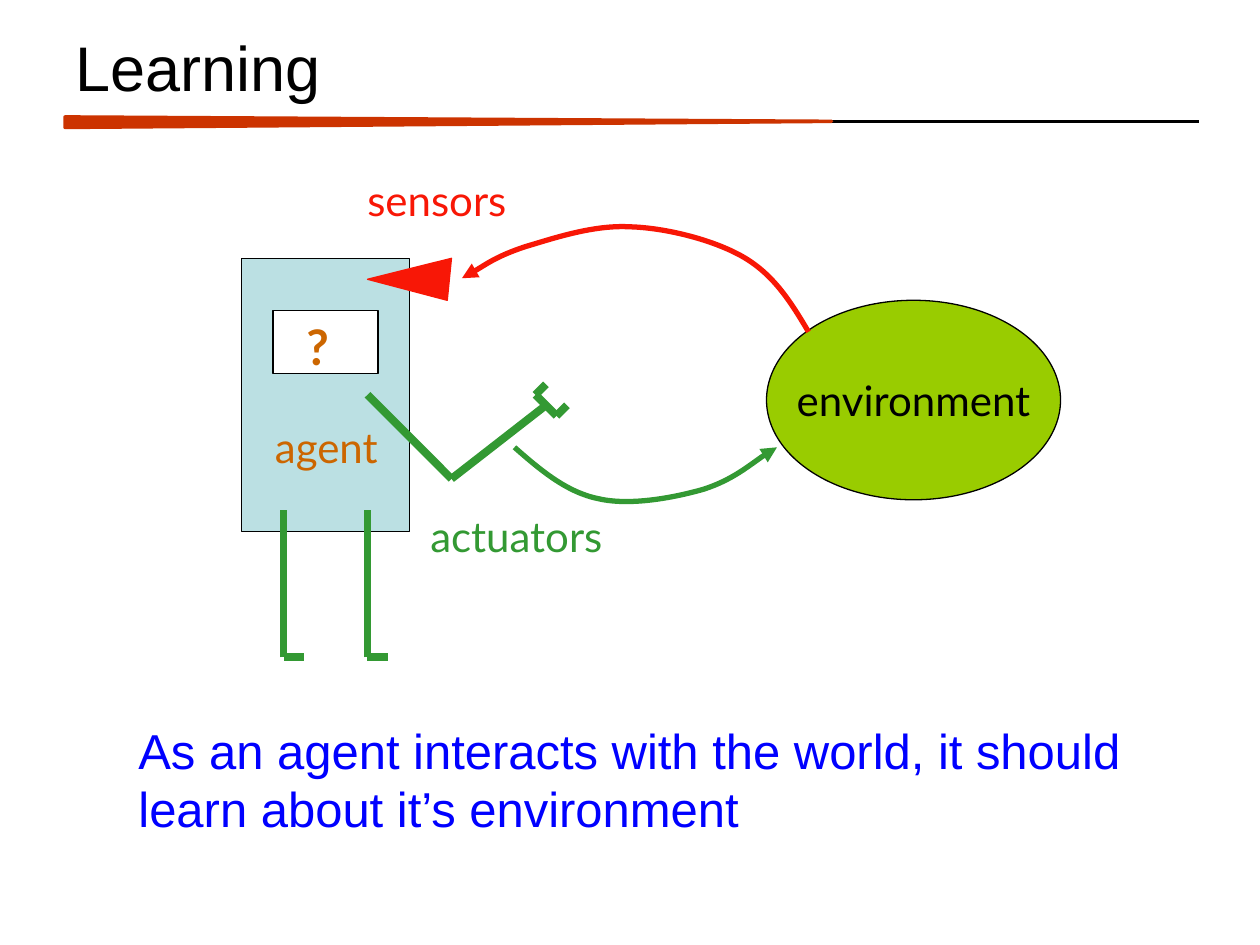
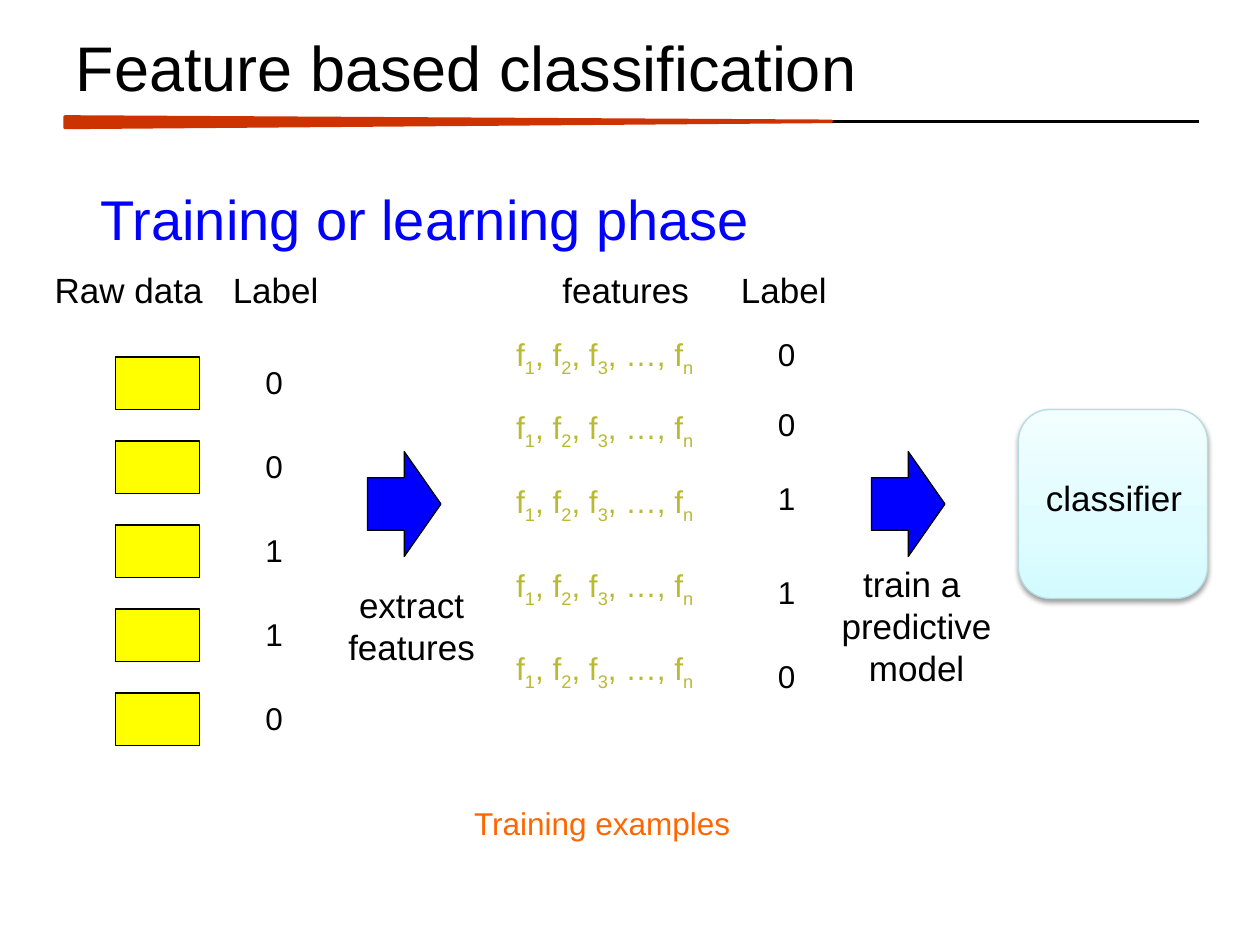
from copy import deepcopy
from dataclasses import dataclass

from lxml.etree import SubElement
from pptx import Presentation
from pptx.dml.color import RGBColor
from pptx.enum.shapes import MSO_CONNECTOR, MSO_SHAPE
from pptx.enum.text import MSO_ANCHOR, PP_ALIGN
from pptx.oxml.ns import qn
from pptx.util import Inches, Pt

GRID = Inches(1 / 12)  # the slide is 120 columns by 90 rows
TEXT_ROWS = 4.8


@dataclass(frozen=True)
class Theme:
    black: str = "000000"
    white: str = "FFFFFF"
    rust: str = "CC3300"
    blue: str = "0000FF"
    lime: str = "99CC00"
    red: str = "F81706"
    green: str = "339933"
    pale_blue: str = "BBE0E3"
    brown: str = "CC6600"
    yellow: str = "FFFF00"
    olive: str = "BAB932"
    orange: str = "FF6600"
    glass_edge: str = "B6DCDF"
    glass: tuple = ((0, "D3FBFF"), (0.35, "DFFCFF"), (1, "F2FEFF"))
    sans: str = "Arial"
    diagram: str = "Lato"
    title: int = 36
    heading: int = 32
    statement: int = 28
    name: int = 24
    label: int = 20
    value: int = 18
    thin: float = 0.75
    rule: float = 2
    arrow: float = 3
    limb: float = 4.5


THEME = Theme()


@dataclass(frozen=True)
class Box:
    """A region measured in grid columns and rows."""
    left: float
    top: float
    width: float
    height: float

    def inner(self, left, top, width, height):
        return Box(self.left + left, self.top + top, width, height)

    def point(self, column, row):
        return round((self.left + column) * GRID), round((self.top + row) * GRID)

    def emu(self):
        return *self.point(0, 0), round(self.width * GRID), round(self.height * GRID)


# Drawing helpers

def color(value):
    return RGBColor.from_string(value)


def format_runs(frame, size, ink, font=THEME.sans, align=PP_ALIGN.LEFT, bold=False):
    for para in frame.paragraphs:
        para.alignment = align
        for run in para.runs:
            run.font.size = Pt(size)
            run.font.name = font
            run.font.bold = bold
            run.font.color.rgb = color(ink)


def add_text(shapes, box, words, size, ink, wrap=False, **style):
    frame = shapes.add_textbox(*box.emu()).text_frame
    frame.word_wrap = wrap
    frame.text = words
    format_runs(frame, size, ink, **style)
    return frame


def add_centered(shapes, box, words, size=THEME.label, ink=THEME.black):
    return add_text(shapes, box, words, size, ink, align=PP_ALIGN.CENTER)


def paint(shape, fill, edge=THEME.black, width=THEME.thin):
    shape.shadow.inherit = False
    if fill:
        shape.fill.solid()
        shape.fill.fore_color.rgb = color(fill)
    else:
        shape.fill.background()
    shape.line.color.rgb = color(edge)
    shape.line.width = Pt(width)
    return shape


def add_preset(shapes, kind, box, fill, edge=THEME.black, width=THEME.thin):
    return paint(shapes.add_shape(kind, *box.emu()), fill, edge, width)


def add_line(shapes, box, start, end, ink, width):
    line = shapes.add_connector(
        MSO_CONNECTOR.STRAIGHT, *box.point(*start), *box.point(*end))
    line.line.color.rgb = color(ink)
    line.line.width = Pt(width)
    SubElement(line._element.spPr, qn("a:effectLst"))


def add_outline(shapes, box, points, close):
    first, *rest = [box.point(*point) for point in points]
    builder = shapes.build_freeform(*first)
    builder.add_line_segments(rest, close=close)
    return builder.convert_to_shape()


def add_curved_arrow(shapes, box, points, ink):
    """Points are a start, then two controls and an end for each curve."""
    arrow = paint(add_outline(shapes, box, points, False), None, ink, THEME.arrow)
    segments = list(arrow._element.iter(qn("a:lnTo")))
    for index in range(0, len(segments), 3):
        curve = segments[index]
        curve.tag = qn("a:cubicBezTo")
        for segment in segments[index + 1:index + 3]:
            curve.append(segment[0])
            segment.getparent().remove(segment)
    SubElement(arrow.line._get_or_add_ln(), qn("a:tailEnd"), type="triangle")


# Shared title and tapering rule

def add_titled_page(deck, words):
    page = deck.slides.add_slide(deck.slide_layouts[5])
    length, thickness = 73, 1
    rule = Box(6.2, 11.14, 108, thickness)
    add_line(page.shapes, rule, (0, 0.42), (rule.width, 0.42), THEME.black, THEME.rule)
    offset = (length - thickness) / 2
    taper = add_preset(page.shapes, MSO_SHAPE.ISOSCELES_TRIANGLE,
                       rule.inner(offset, -offset, thickness, length),
                       THEME.rust, THEME.rust, THEME.rule)
    taper.rotation = 90
    taper.adjustments[0] = 0.42

    title = page.shapes.title
    title.left, title.top, title.width, title.height = Box(6, 2, 108, 8.6).emu()
    title.text_frame.text = words
    title.text_frame.vertical_anchor = MSO_ANCHOR.MIDDLE
    format_runs(title.text_frame, THEME.title, THEME.black)
    return page


# Agent and environment

def draw_agent(shapes, body):
    add_preset(shapes, MSO_SHAPE.RECTANGLE, body, THEME.pale_blue)
    add_text(shapes, body.inner(2, 15, 14, 6), "agent", THEME.name,
             THEME.brown, font=THEME.diagram)
    add_preset(shapes, MSO_SHAPE.RECTANGLE, body.inner(3, 5, 10, 6), THEME.white)
    add_text(shapes, body.inner(5, 5, 6, 6.8), "?", THEME.statement,
             THEME.brown, font=THEME.diagram, bold=True)

    arm = [((12, 13), (20, 21)), ((20, 21), (29, 14))]
    hand = [((28, 13), (30, 15)), ((28, 13), (29, 12)), ((30, 15), (31, 14))]
    legs = []
    for column in (4, 12):
        heel = (column, 38)
        legs += [(heel, (column, 24)), (heel, (column + 2, 38))]
    for start, end in arm + hand + legs:
        add_line(shapes, body, start, end, THEME.green, THEME.limb)

    sensor = add_outline(shapes, body, [(12, 2), (20, 0), (19.6, 4)], True)
    paint(sensor, THEME.red, THEME.red)


def draw_interaction(shapes, scene):
    environment = add_preset(shapes, MSO_SHAPE.OVAL,
                             scene.inner(50, 12.6, 28, 19), THEME.lime)
    frame = environment.text_frame
    frame.text = "environment"
    frame.word_wrap = False
    frame.vertical_anchor = MSO_ANCHOR.MIDDLE
    format_runs(frame, THEME.name, THEME.black, THEME.diagram, PP_ALIGN.CENTER)

    sensing = [(54, 15.6), (52.4, 12.9), (50.8, 10.3), (48, 8.6),
               (45.2, 6.9), (40.5, 5.7), (37, 5.6),
               (33.5, 5.4), (29.7, 6.7), (27, 7.5),
               (24.3, 8.4), (22, 10), (21, 10.5)]
    acting = [(26, 26.6), (28.5, 28.8), (31, 30.9), (34, 31.5),
              (37, 32.2), (41.2, 31.4), (44, 30.6),
              (46.8, 29.7), (49.8, 27.2), (51, 26.6)]
    add_curved_arrow(shapes, scene, sensing, THEME.red)
    add_curved_arrow(shapes, scene, acting, THEME.green)

    draw_agent(shapes.add_group_shape().shapes, scene.inner(0, 8.6, 16, 26))
    for words, ink, column, row in (("sensors", THEME.red, 10.8, 0),
                                    ("actuators", THEME.green, 16.8, 32)):
        add_text(shapes, scene.inner(column, row, 21, 6), words,
                 THEME.name, ink, font=THEME.diagram)


def build_learning_page(deck):
    page = add_titled_page(deck, "Learning")
    draw_interaction(page.shapes, Box(23, 16, 78, 47))
    add_text(page.shapes, Box(12, 68, 98, 12.5),
             "As an agent interacts with the world, it should learn about "
             "it’s environment", THEME.statement, THEME.blue, wrap=True)


# Training pipeline

def draw_raw_data(shapes, box, labels):
    add_centered(shapes, box.inner(-0.1, 0, 16.7, 5.3), "Raw data")
    add_centered(shapes, box.inner(16.9, 0, 10.7, 5.3), "Label")
    for index, label in enumerate(labels):
        row = 9 + 8 * index
        add_preset(shapes, MSO_SHAPE.RECTANGLE, box.inner(7, row, 8, 5), THEME.yellow)
        add_centered(shapes, box.inner(20.1, row, 4, TEXT_ROWS), label, THEME.value)


def draw_features(shapes, box, labels):
    add_centered(shapes, box.inner(4.3, 0, 14.6, 5.3), "features")
    add_centered(shapes, box.inner(21.3, 0, 10.7, 5.3), "Label")
    feature_rows = (6.3, 13.3, 20.3, 28.3, 36.2)
    label_rows = (6.3, 13, 20, 29, 37)
    for feature_row, label_row, label in zip(feature_rows, label_rows, labels):
        frame = add_centered(shapes, box.inner(-0.4, feature_row, 20, TEXT_ROWS), "")
        para = frame.paragraphs[0]
        for index, piece in enumerate(("f", "1", ", f", "2", ", f", "3", ", …, f", "n")):
            span = para.add_run()
            span.text = piece
            if index % 2:
                span.font._element.set("baseline", "-25000")
        format_runs(frame, THEME.value, THEME.olive, align=PP_ALIGN.CENTER)
        add_centered(shapes, box.inner(24.9, label_row, 4, TEXT_ROWS), label, THEME.value)


def draw_step(shapes, arrow, caption, caption_box):
    add_preset(shapes, MSO_SHAPE.RIGHT_ARROW, arrow, THEME.blue)
    add_centered(shapes, caption_box, caption)


def draw_classifier(shapes, box):
    card = add_preset(shapes, MSO_SHAPE.ROUNDED_RECTANGLE, box,
                      THEME.white, THEME.glass_edge)
    card.fill.gradient()
    card.fill.gradient_angle = 90
    first = next(card._element.iter(qn("a:gs")))
    first.addnext(deepcopy(first))
    for stop, (position, tint) in zip(card.fill.gradient_stops, THEME.glass):
        stop.position = position
        stop.color.rgb = color(tint)

    # Soft shadow below the card
    effects = card._element.spPr.find(qn("a:effectLst"))
    shadow = SubElement(effects, qn("a:outerShdw"), blurRad=str(Pt(3.1)),
                        dist=str(Pt(1.6)), dir="5400000", rotWithShape="0")
    shade = SubElement(shadow, qn("a:srgbClr"), val=THEME.black)
    SubElement(shade, qn("a:alpha"), val="38000")
    add_centered(shapes, box.inner(1.3, 5.8, 15.6, 5.3), "classifier")


def build_classification_page(deck):
    shapes = add_titled_page(deck, "Feature based classification").shapes
    labels = "00110"
    add_text(shapes, Box(2, 17, 77, 7.7), "Training or learning phase",
             THEME.heading, THEME.blue, wrap=True, align=PP_ALIGN.CENTER)
    draw_raw_data(shapes, Box(4, 25, 28, 46), labels)
    draw_step(shapes, Box(35, 43, 7, 10), "extract\nfeatures", Box(31.8, 55, 14.8, 9.2))
    draw_features(shapes, Box(48, 25, 32, 42), labels)
    draw_step(shapes, Box(83, 43, 7, 10), "train a \npredictive\nmodel",
              Box(78.9, 53, 16.8, 13.3))
    draw_classifier(shapes, Box(97, 39, 18, 18))
    add_centered(shapes, Box(43.8, 76, 27.1, TEXT_ROWS), "Training examples",
                 THEME.value, THEME.orange)


def main():
    deck = Presentation()
    deck.slide_width, deck.slide_height = Inches(10), Inches(7.5)
    build_learning_page(deck)
    build_classification_page(deck)
    deck.save("out.pptx")


if __name__ == "__main__":
    main()
